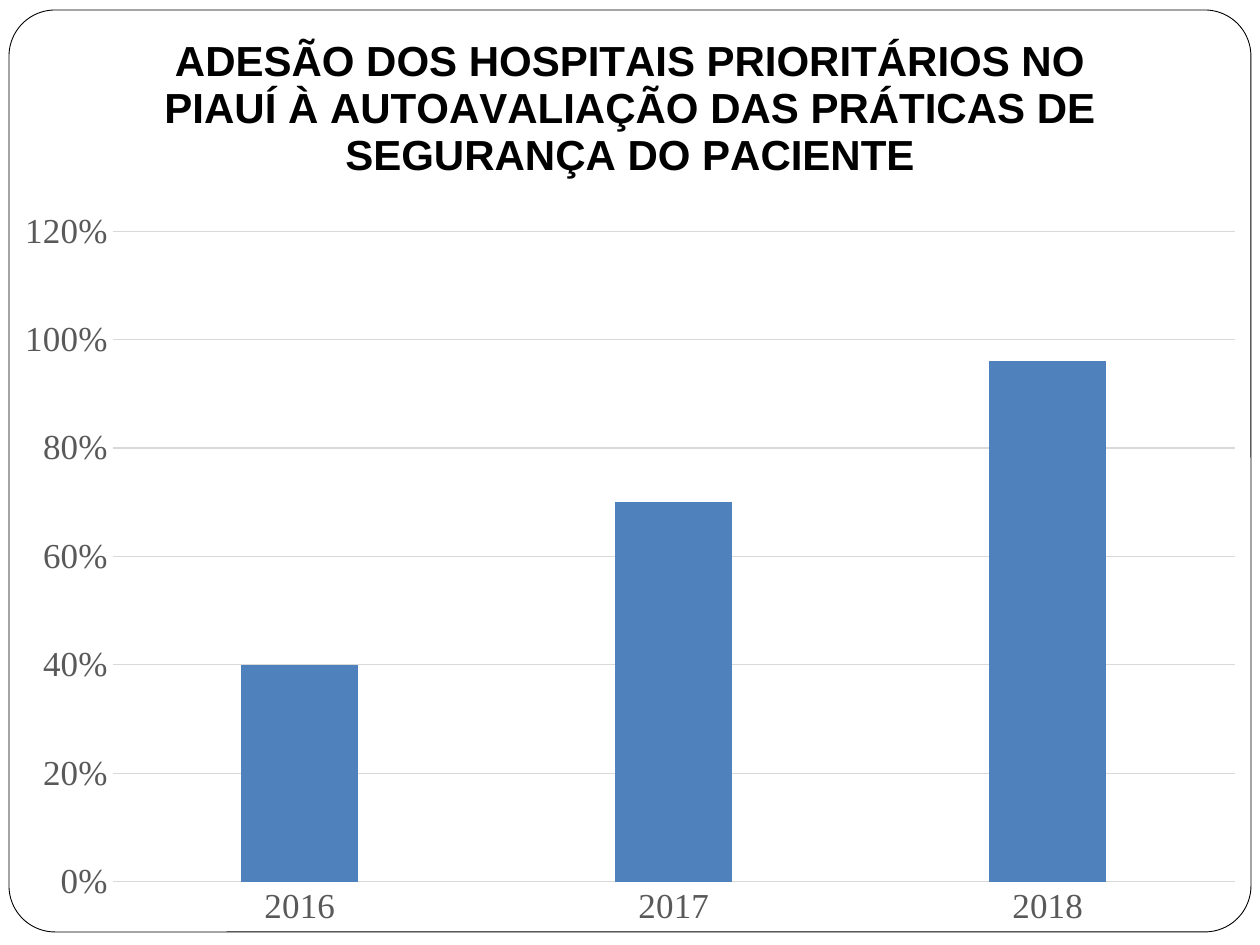
from pptx import Presentation
from pptx.chart.data import CategoryChartData
from pptx.dml.color import RGBColor
from pptx.enum.chart import XL_CHART_TYPE, XL_TICK_MARK
from pptx.enum.shapes import MSO_SHAPE
from pptx.util import Pt

SCALE = 914400 / 126
WIDTH, HEIGHT = 1260, 945
COLORS = {"white": "FFFFFF", "black": "000000", "label": "595959",
          "grid": "D9D9D9", "bar": "4F81BD"}
SERIF, SANS = "Times New Roman", "Arial"
TITLE = ("ADESÃO DOS HOSPITAIS PRIORITÁRIOS NO PIAUÍ À AUTOAVALIAÇÃO "
         "DAS PRÁTICAS DE SEGURANÇA DO PACIENTE")
RATES = {"2016": 0.4, "2017": 0.7, "2018": 0.96}


def px(*sizes):
    """Turn pixel lengths into EMU."""
    return [round(size * SCALE) for size in sizes]


def color(name):
    """Look up a named colour."""
    return RGBColor.from_string(COLORS[name])


def set_font(font, face, size, name, bold=False):
    """Set face, size, colour and weight of a font."""
    font.name, font.size, font.bold = face, Pt(size), bold
    font.color.rgb = color(name)


def set_line(line, name, width):
    """Set colour and width of a line."""
    line.color.rgb = color(name)
    line.width = Pt(width)


def add_frame(slide):
    """Draw the rounded frame around the slide."""
    frame = slide.shapes.add_shape(MSO_SHAPE.ROUNDED_RECTANGLE,
                                   *px(9, 10, 1242, 922))
    frame.adjustments[0] = 0.05
    frame.shadow.inherit = False
    frame.fill.solid()
    frame.fill.fore_color.rgb = color("white")
    set_line(frame.line, "black", 0.5)


def add_title(chart):
    """Give the chart its title."""
    frame = chart.chart_title.text_frame
    frame.text = TITLE
    set_font(frame.paragraphs[0].font, SANS, 24, "black", bold=True)
    chart.chart_title.include_in_layout = False


def style_axes(chart):
    """Style both axes and the gridlines."""
    years, rates = chart.category_axis, chart.value_axis
    for axis in (years, rates):
        axis.major_tick_mark = axis.minor_tick_mark = XL_TICK_MARK.NONE
        set_font(axis.tick_labels.font, SERIF, 20, "label")
    set_line(years.format.line, "grid", 0.75)
    rates.format.line.fill.background()
    rates.has_major_gridlines = True
    set_line(rates.major_gridlines.format.line, "grid", 0.75)
    rates.tick_labels.number_format = "0%"
    rates.tick_labels.number_format_is_linked = False
    rates.minimum_scale, rates.maximum_scale = 0, 1.2
    rates.major_unit = 0.2


def add_chart(slide):
    """Add the column chart of yearly rates."""
    data = CategoryChartData(number_format="0%")
    data.categories = list(RATES)
    data.add_series("Series 1", list(RATES.values()))
    chart = slide.shapes.add_chart(XL_CHART_TYPE.COLUMN_CLUSTERED,
                                   *px(0, 0, WIDTH, HEIGHT), data).chart
    set_font(chart.font, SERIF, 10, "black")
    chart.has_legend = False
    add_title(chart)
    style_axes(chart)
    plot = chart.plots[0]
    plot.gap_width, plot.overlap = 219, -27
    plot.vary_by_categories = False
    fill = plot.series[0].format.fill
    fill.solid()
    fill.fore_color.rgb = color("bar")


def main():
    """Build and save the slide."""
    deck = Presentation()
    deck.slide_width, deck.slide_height = px(WIDTH, HEIGHT)
    slide = deck.slides.add_slide(deck.slide_layouts[6])
    add_frame(slide)
    add_chart(slide)
    deck.save("out.pptx")


if __name__ == "__main__":
    main()
